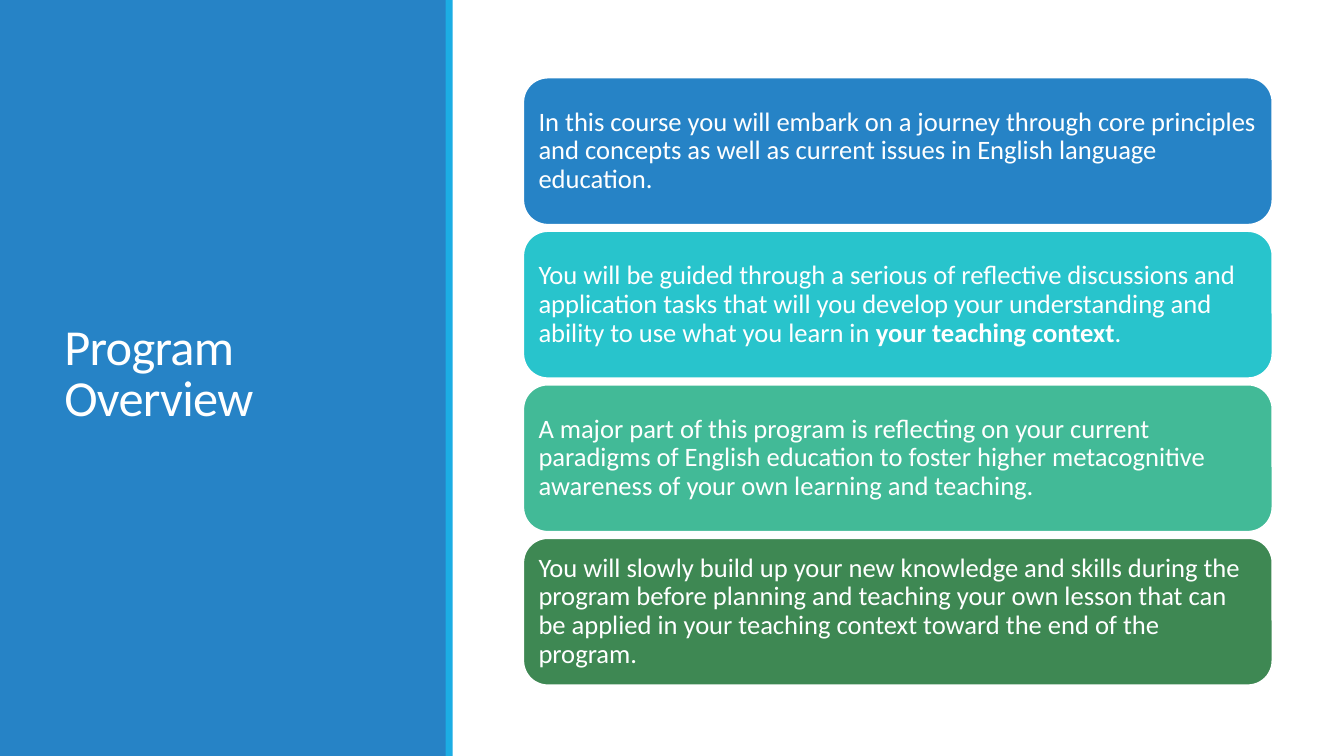
"""Builds the Program Overview slide: a title panel beside four stacked cards."""
from pptx import Presentation
from pptx.dml.color import RGBColor
from pptx.enum.shapes import MSO_SHAPE
from pptx.enum.text import MSO_ANCHOR, PP_ALIGN
from pptx.util import Inches, Pt

RECT = MSO_SHAPE.RECTANGLE
ROUNDED = MSO_SHAPE.ROUNDED_RECTANGLE
MIDDLE = MSO_ANCHOR.MIDDLE
LEFT = PP_ALIGN.LEFT

WHITE = RGBColor(0xFF, 0xFF, 0xFF)
BLUE = RGBColor(0x26, 0x83, 0xC6)
SKY = RGBColor(0x1C, 0xAD, 0xE4)
TURQUOISE = RGBColor(0x28, 0xC4, 0xCC)
MINT = RGBColor(0x42, 0xBA, 0x97)
GREEN = RGBColor(0x3E, 0x88, 0x53)

CARD_TOP = 0.77
CARD_STEP = 1.523
CARDS = [
    (BLUE, [("In this course you will embark on a journey through core principles "
             "and concepts as well as current issues in English language education.", False)]),
    (TURQUOISE, [("You will be guided through a serious of reflective discussions and "
                  "application tasks that will you develop your understanding and "
                  "ability to use what you learn in ", False),
                 ("your teaching context", True),
                 (".", False)]),
    (MINT, [("A major part of this program is reflecting on your current paradigms of "
             "English education to foster higher metacognitive awareness of your own "
             "learning and teaching.", False)]),
    (GREEN, [("You will slowly build up your new knowledge and skills during the program "
              "before planning and teaching your own lesson that can be applied in your "
              "teaching context toward the end of the program.", False)]),
]


def add_block(shape, left, top, width, height, color):
    block = s.shapes.add_shape(shape, Inches(left), Inches(top), Inches(width), Inches(height))
    block.shadow.inherit = False
    block.fill.solid()
    block.fill.fore_color.rgb = color
    block.line.fill.background()
    return block


def style_paragraph(p, size, spacing):
    p.alignment = LEFT
    p.line_spacing = spacing
    p.font.name = "Calibri"
    p.font.size = Pt(size)
    p.font.color.rgb = WHITE


prs = Presentation()
prs.slide_width = Inches(13.33)
prs.slide_height = Inches(7.5)
s = prs.slides.add_slide(prs.slide_layouts[6])

add_block(RECT, 0, 0, 4.43, 7.5, BLUE)
add_block(RECT, 4.42, 0, 0.07, 7.5, SKY)

title = s.shapes.add_textbox(Inches(0.54), Inches(0.57), Inches(3.37), Inches(6.31))
tf = title.text_frame
tf.word_wrap = True
tf.vertical_anchor = MIDDLE
p = tf.paragraphs[0]
style_paragraph(p, 36, 0.85)
r = p.add_run()
r.text = "Program Overview"
r.font._element.set("spc", "-50")

for i, (color, runs) in enumerate(CARDS):
    card = add_block(ROUNDED, 5.19, CARD_TOP + i * CARD_STEP, 7.43, 1.46, color)
    card.line.color.rgb = WHITE
    card.line.width = Pt(1.25)
    tf = card.text_frame
    tf.word_wrap = True
    tf.vertical_anchor = MIDDLE
    tf.margin_left = tf.margin_right = tf.margin_top = tf.margin_bottom = Inches(0.08)
    p = tf.paragraphs[0]
    style_paragraph(p, 19, 0.9)
    for text, bold in runs:
        r = p.add_run()
        r.text = text
        if bold:
            r.font.bold = True

prs.save("out.pptx")
